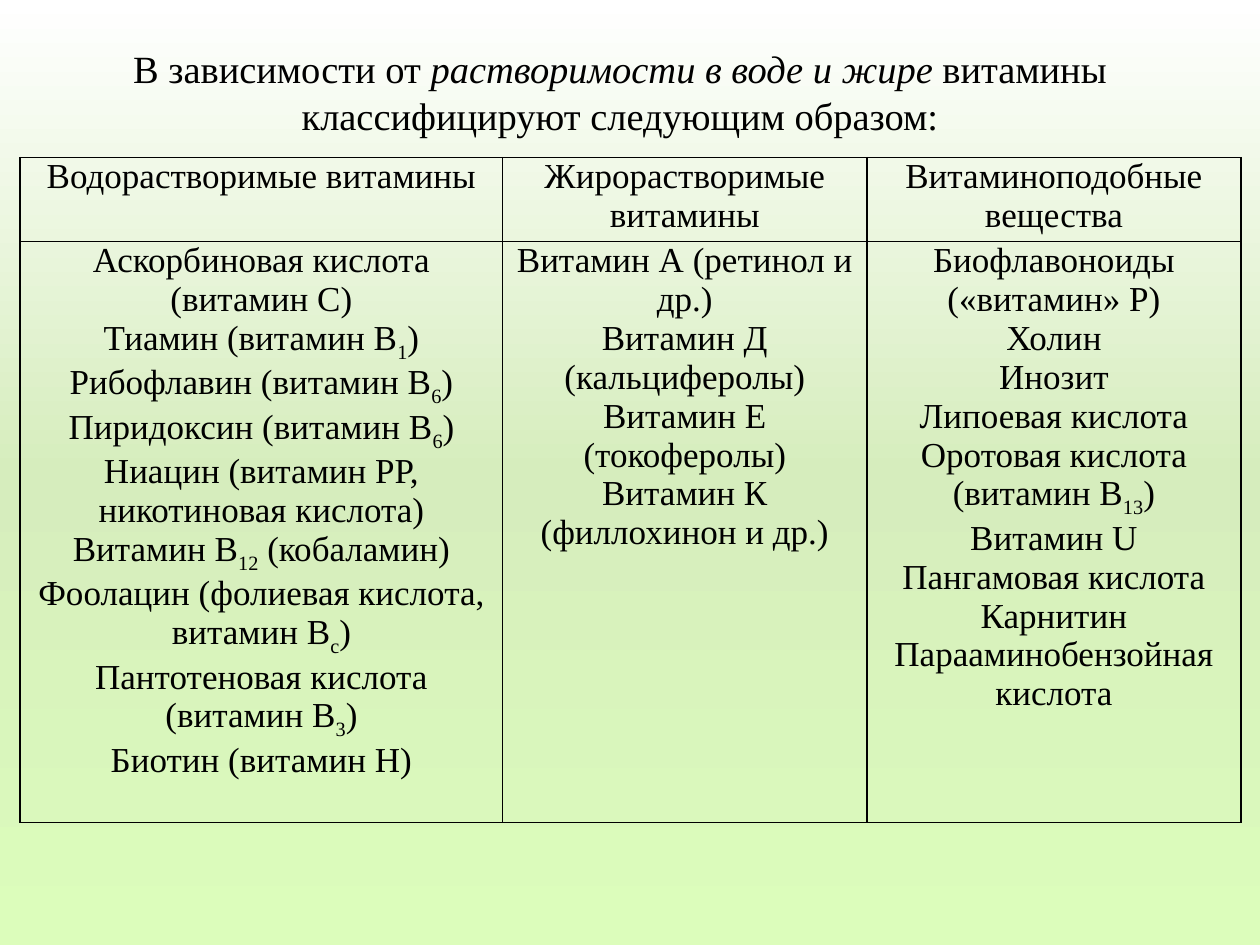
from lxml import etree
from pptx import Presentation
from pptx import util as u
from pptx.dml.color import RGBColor
from pptx.enum import text
from pptx.oxml import parse_xml
from pptx.oxml.ns import nsdecls, qn

W, H = 10, 7.5
FONT = {"name": "Times New Roman", "italic": False, "bold": False}
INK = "000000"
STOPS = [(0, "FFFFFF"), (50, "D6EDBD"), (100, "DCFDBB")]
TITLE = ("В зависимости от *растворимости в воде и жире*"
         " витамины классифицируют следующим образом:")
COLUMNS = [
    (3.83, "Водорастворимые витамины", [
        "Аскорбиновая кислота (витамин С)",
        "Тиамин (витамин В_1_)",
        "Рибофлавин (витамин В_6_)",
        "Пиридоксин (витамин В_6_)",
        "Ниацин (витамин РР, никотиновая кислота)",
        "Витамин В_12_ (кобаламин)",
        "Фоолацин (фолиевая кислота, витамин В_с_)",
        "Пантотеновая кислота (витамин В_3_)",
        "Биотин (витамин Н)"]),
    (2.89, "Жирорастворимые витамины", [
        "Витамин А (ретинол и др.)",
        "Витамин Д (кальциферолы)",
        "Витамин Е (токоферолы)",
        "Витамин К (филлохинон и др.)"]),
    (2.97, "Витаминоподобные вещества", [
        "Биофлавоноиды («витамин» Р)",
        "Холин",
        "Инозит",
        "Липоевая кислота",
        "Оротовая кислота (витамин В_13_)",
        "Витамин U",
        "Пангамовая кислота",
        "Карнитин",
        "Парааминобензойная кислота"]),
]
ROWS = [0.62, 4.27]


def rgb(value):
    """Return the colour for a hex string."""
    return RGBColor.from_string(value)


def set_all(obj, values):
    """Set every attribute named in a dict."""
    for name, value in values.items():
        setattr(obj, name, value)


def add_runs(p, line, size, mark, emphasise):
    """Write a centred line, emphasising the parts between marks."""
    p.alignment = text.PP_ALIGN.CENTER
    for i, part in enumerate(line.split(mark)):
        r = p.add_run()
        r.text = part
        set_all(r.font, {**FONT, "size": u.Pt(size)})
        r.font.color.rgb = rgb(INK)
        if i % 2:
            emphasise(r.font)


def make_italic(font):
    """Slant a run."""
    font.italic = True


def make_subscript(font):
    """Lower a run below the baseline."""
    font._element.set("baseline", "-25000")


def paint_background(s):
    """Fill the slide with a vertical gradient."""
    stops = "".join(f'<a:gs pos="{pos * 1000}"><a:srgbClr val="{c}"/></a:gs>'
                    for pos, c in STOPS)
    fill = s.background.fill
    fill.solid()
    bg = s._element.cSld.find(qn("p:bg")).find(qn("p:bgPr"))
    bg.replace(bg[0], parse_xml(
        f'<a:gradFill {nsdecls("a")} rotWithShape="1"><a:gsLst>{stops}</a:gsLst>'
        '<a:lin ang="5400000" scaled="0"/></a:gradFill>'))


def place_title(s, box):
    """Place the heading in its box."""
    sp = s.shapes.title
    set_all(sp, dict(zip(("left", "top", "width", "height"), map(u.Inches, box))))
    tf = sp.text_frame
    set_all(tf, {"word_wrap": True, "vertical_anchor": text.MSO_ANCHOR.TOP,
                 "auto_size": text.MSO_AUTO_SIZE.SHAPE_TO_FIT_TEXT})
    add_runs(tf.paragraphs[0], TITLE, 22, "*", make_italic)


def add_borders(cell):
    """Draw a thin line on each side of a cell."""
    props = cell._tc.get_or_add_tcPr()
    for i, side in enumerate(("lnL", "lnR", "lnT", "lnB")):
        ln = etree.Element(qn(f"a:{side}"), w=str(u.Pt(1)))
        fill = etree.SubElement(ln, qn("a:solidFill"))
        etree.SubElement(fill, qn("a:srgbClr"), val=INK)
        props.insert(i, ln)


def fill_cell(cell, lines):
    """Format a cell and write one paragraph for each line."""
    side = u.Inches(0.07)
    set_all(cell, {"margin_left": side, "margin_right": side,
                   "margin_top": 0, "margin_bottom": 0})
    cell.fill.background()
    add_borders(cell)
    tf = cell.text_frame
    for i, line in enumerate(lines):
        p = tf.add_paragraph() if i else tf.paragraphs[0]
        add_runs(p, line, 20, "_", make_subscript)


def place_table(s, box):
    """Place the vitamin table in its box."""
    table = s.shapes.add_table(len(ROWS), len(COLUMNS), *map(u.Inches, box)).table
    set_all(table, {"first_row": False, "horz_banding": False})
    for row, height in zip(table.rows, ROWS):
        row.height = u.Inches(height)
    for i, (width, heading, items) in enumerate(COLUMNS):
        table.columns[i].width = u.Inches(width)
        fill_cell(table.cell(0, i), [heading])
        fill_cell(table.cell(1, i), items)


def main():
    """Build and save the slide."""
    prs = Presentation()
    set_all(prs, {"slide_width": u.Inches(W), "slide_height": u.Inches(H)})
    s = prs.slides.add_slide(prs.slide_layouts[5])
    paint_background(s)
    place_table(s, (0.16, H / 6, sum(c[0] for c in COLUMNS), sum(ROWS)))
    place_title(s, (0, 0.31, 9.84, 0.84))
    prs.save("out.pptx")


if __name__ == "__main__":
    main()
